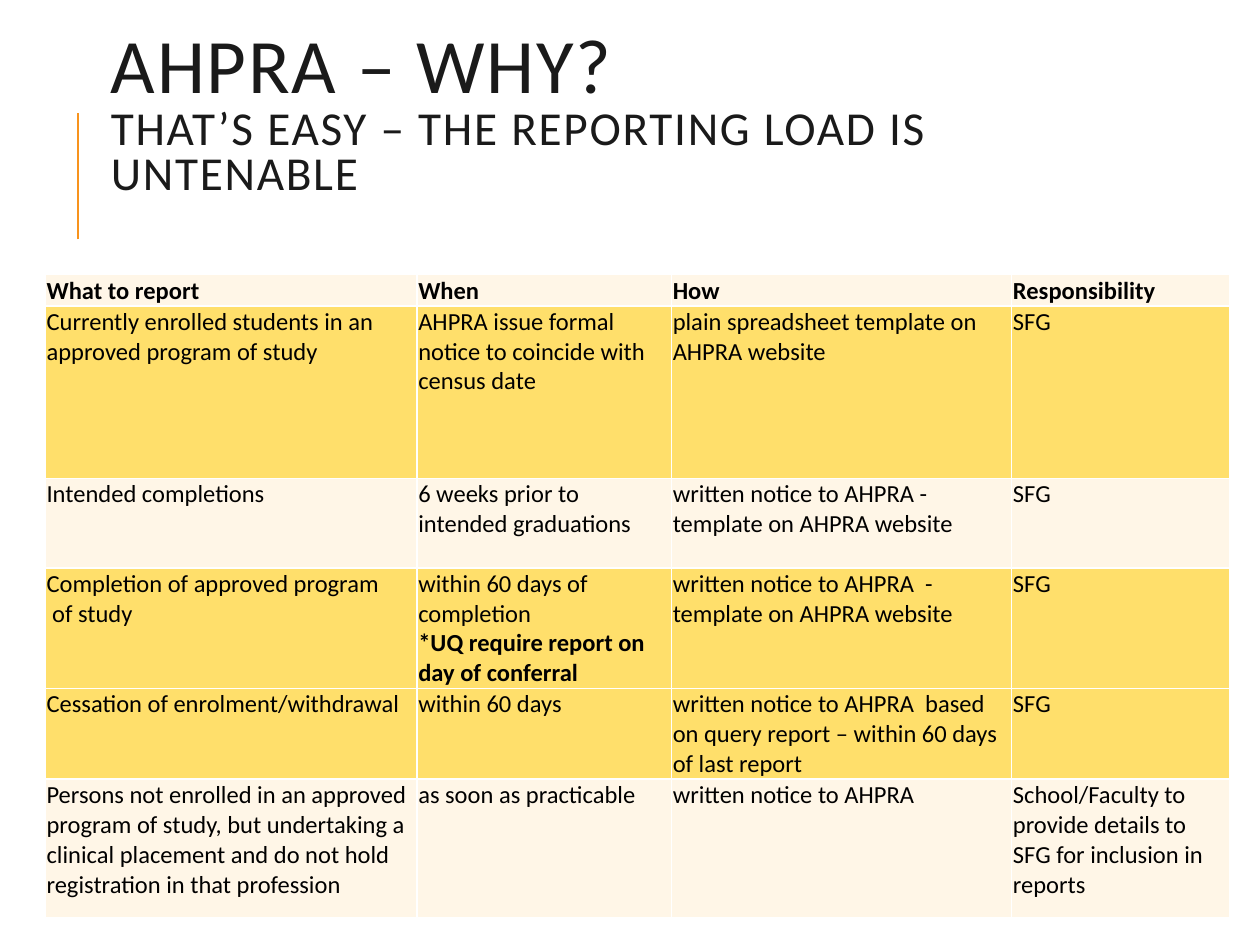
from dataclasses import dataclass

import pptx
import pptx.dml.color
import pptx.enum.shapes
import pptx.enum.text
import pptx.oxml.ns
import pptx.util
from lxml import etree

Inches = pptx.util.Inches
Pt = pptx.util.Pt
qn = pptx.oxml.ns.qn

FONT = "Calibri"
CREAM, YELLOW = "FFF6E7", "FFDF6B"
COLUMN_WIDTHS = [2.95, 2.02, 2.7, 1.73]


@dataclass
class ReportRow:
    height: float
    fill: str
    cells: list[str]  # a line feed starts a new paragraph
    header: bool = False


ROWS = [
    ReportRow(0.22, CREAM, ["What to report", "When", "How", "Responsibility"], header=True),
    ReportRow(1.37, YELLOW, [
        "Currently enrolled students in an\napproved program of study",
        "AHPRA issue formal notice to coincide with census date",
        "plain spreadsheet template on AHPRA website",
        "SFG",
    ]),
    ReportRow(0.71, CREAM, [
        "Intended completions",
        "6 weeks prior to intended graduations",
        "written notice to AHPRA - template on AHPRA website",
        "SFG",
    ]),
    ReportRow(0.66, YELLOW, [
        "Completion of approved program\n of study",
        "within 60 days of completion\n*UQ require report on day of conferral",
        "written notice to AHPRA  - template on AHPRA website",
        "SFG",
    ]),
    ReportRow(0.66, YELLOW, [
        "Cessation of enrolment/withdrawal",
        "within 60 days",
        "written notice to AHPRA  based on query report – within 60 days of last report",
        "SFG",
    ]),
    ReportRow(1.1, CREAM, [
        "Persons not enrolled in an approved program of study, but undertaking a clinical "
        "placement and do not hold registration in that profession",
        "as soon as practicable",
        "written notice to AHPRA",
        "School/Faculty to provide details to SFG for inclusion in reports",
    ]),
]


def color(value: str) -> pptx.dml.color.RGBColor:
    return pptx.dml.color.RGBColor.from_string(value)


def format_run(run, size: float, text_color: str, bold: bool = False) -> None:
    run.font.name = FONT
    run.font.size = Pt(size)
    run.font.bold = bold
    run.font.color.rgb = color(text_color)


def set_borders(cell, line_color: str, width: float) -> None:
    properties = cell._tc.get_or_add_tcPr()
    for position, side in enumerate(("lnL", "lnR", "lnT", "lnB")):
        line = etree.Element(qn(f"a:{side}"), w=str(Pt(width)))
        fill = etree.SubElement(line, qn("a:solidFill"))
        etree.SubElement(fill, qn("a:srgbClr"), val=line_color)
        properties.insert(position, line)


def fill_cell(cell, text: str, row: ReportRow) -> None:
    cell.margin_left = cell.margin_right = cell.margin_top = Inches(0.01)
    cell.margin_bottom = 0
    anchors = pptx.enum.text.MSO_ANCHOR
    cell.vertical_anchor = anchors.BOTTOM if row.header else anchors.TOP
    cell.fill.solid()
    cell.fill.fore_color.rgb = color(row.fill)
    set_borders(cell, "FFFFFF", 1)
    cell.text_frame.text = text
    for paragraph in cell.text_frame.paragraphs:
        bold = row.header or paragraph.text.startswith("*")
        for run in paragraph.runs:
            format_run(run, 14, "000000", bold)


def add_accent_line(slide) -> None:
    line = slide.shapes.add_connector(
        pptx.enum.shapes.MSO_CONNECTOR.STRAIGHT,
        Inches(0.62), Inches(1.9), Inches(0.62), Inches(0.9))
    line.line.color.rgb = color("F8931D")
    line.line.width = Pt(1.5)
    etree.SubElement(line._element.spPr, qn("a:effectLst"))


def set_title(slide) -> None:
    title = slide.shapes.title
    title.left, title.top = Inches(0.78), Inches(0.11)
    title.width, title.height = Inches(7.97), Inches(1.64)
    frame = title.text_frame
    frame.text = "AHPRA – WHY?\vTHAT’S EASY – THE REPORTING LOAD IS UNTENABLE"
    frame.word_wrap = True
    frame.auto_size = pptx.enum.text.MSO_AUTO_SIZE.NONE
    frame.vertical_anchor = pptx.enum.text.MSO_ANCHOR.MIDDLE
    paragraph = frame.paragraphs[0]
    paragraph.alignment = pptx.enum.text.PP_ALIGN.LEFT
    paragraph.line_spacing = 0.8
    for run, size in zip(paragraph.runs, (44, 27)):
        format_run(run, size, "1A1A1A")
        run.font._element.set("spc", "100")


def add_report_table(slide) -> None:
    table = slide.shapes.add_table(
        len(ROWS), len(COLUMN_WIDTHS), Inches(0.36), Inches(2.18),
        Inches(sum(COLUMN_WIDTHS)), Inches(sum(row.height for row in ROWS))).table
    table.horz_banding = False
    for column, width in zip(table.columns, COLUMN_WIDTHS):
        column.width = Inches(width)
    for table_row, row in zip(table.rows, ROWS):
        table_row.height = Inches(row.height)
        for cell, text in zip(table_row.cells, row.cells):
            fill_cell(cell, text, row)


def main() -> None:
    presentation = pptx.Presentation()
    presentation.slide_width, presentation.slide_height = Inches(10), Inches(7.5)
    slide = presentation.slides.add_slide(presentation.slide_layouts[5])  # title only
    add_accent_line(slide)
    set_title(slide)
    add_report_table(slide)
    presentation.save("out.pptx")


if __name__ == "__main__":
    main()
